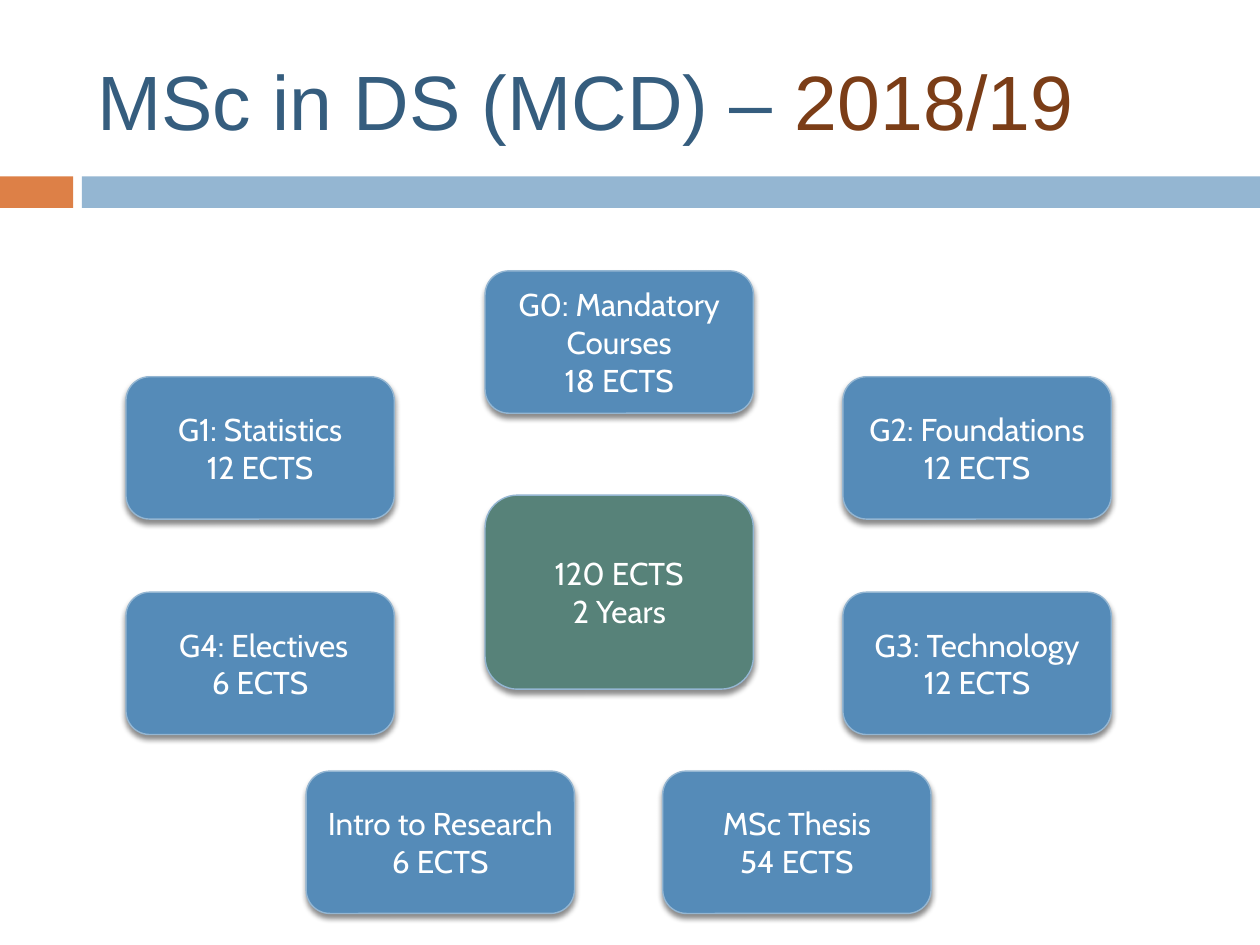
from lxml import etree
from pptx import Presentation
from pptx.dml.color import RGBColor
from pptx.enum.shapes import MSO_SHAPE
from pptx.enum.text import MSO_ANCHOR, PP_ALIGN
from pptx.oxml.ns import qn
from pptx.util import Inches, Pt

RECT, ROUNDED = MSO_SHAPE.RECTANGLE, MSO_SHAPE.ROUNDED_RECTANGLE
MIDDLE = MSO_ANCHOR.MIDDLE
LEFT, CENTER = PP_ALIGN.LEFT, PP_ALIGN.CENTER

COLORS = {
    "orange": "DD8047", "pale": "94B6D2", "blue": "558BB8", "green": "578279",
    "navy": "355D7E", "brown": "7B3D17", "white": "FFFFFF", "shadow": "000000",
}

# Content
TITLE = [("MSc in DS (MCD) – ", "navy"), ("2018/19", "brown")]
BANDS = [(0, 0.58, "orange"), (0.65, 9.35, "pale")]  # left, width, colour
COLS = {"left": 1, "mid": 3.85, "right": 6.69, "low left": 2.43, "low right": 5.26}
ROWS = {"top": 2.15, "upper": 2.99, "center": 3.93, "lower": 4.7, "bottom": 6.12}
BOX_W, BOX_H, HUB_H = 2.13, 1.13, 1.54
HUB = ("mid", "center", "120 ECTS", "2 Years")
GROUPS = [
    ("mid", "top", "G0: Mandatory Courses", "18 ECTS"),
    ("left", "upper", "G1: Statistics", "12 ECTS"),
    ("right", "upper", "G2: Foundations", "12 ECTS"),
    ("right", "lower", "G3: Technology", "12 ECTS"),
    ("left", "lower", " G4: Electives", "6 ECTS"),
    ("low right", "bottom", "MSc Thesis", "54 ECTS"),
    ("low left", "bottom", "Intro to Research", "6 ECTS"),
]


def rgb(name):
    return RGBColor.from_string(COLORS[name])


def style_run(r, font, size, color):
    r.font.name, r.font.size = font, Pt(size)
    r.font.color.rgb = rgb(color)


def add_block(s, kind, x, y, w, h, color):
    sp = s.shapes.add_shape(kind, Inches(x), Inches(y), Inches(w), Inches(h))
    sp.fill.solid()
    sp.fill.fore_color.rgb = rgb(color)
    sp.line.fill.background()
    sp.shadow.inherit = False
    return sp


def add_drop_shadow(sp):
    effects = sp._element.spPr.find(qn("a:effectLst"))
    shadow = etree.SubElement(effects, qn("a:outerShdw"), blurRad=str(Pt(3)),
                              dist=str(Pt(2.4)), dir="5400000", rotWithShape="0")
    color = etree.SubElement(shadow, qn("a:srgbClr"), val=COLORS["shadow"])
    etree.SubElement(color, qn("a:alpha"), val="45000")


def add_box(s, box, height, color):
    col, row, *lines = box
    sp = add_block(s, ROUNDED, COLS[col], ROWS[row], BOX_W, height, color)
    sp.line.color.rgb = rgb("pale")
    sp.line.width = Pt(0.79)
    add_drop_shadow(sp)
    tf = sp.text_frame
    tf.text = "\n".join(lines)
    tf.word_wrap = True
    tf.vertical_anchor = MIDDLE
    for p in tf.paragraphs:
        p.alignment = CENTER
        style_run(p.runs[0], "Cabin", 18, "white")


prs = Presentation()
prs.slide_width, prs.slide_height = Inches(10), Inches(7.5)
s = prs.slides.add_slide(prs.slide_layouts[5])

# Bands under the title
for x, w, color in BANDS:
    add_block(s, RECT, x, 1.4, w, 0.25, color)

# Title
title = s.shapes.title
title.left, title.top = Inches(0.67), Inches(0.25)
title.width, title.height = Inches(8.92), Inches(1.08)
title.text_frame.vertical_anchor = MIDDLE
p = title.text_frame.paragraphs[0]
p.alignment = LEFT
for text, color in TITLE:
    r = p.add_run()
    r.text = text
    style_run(r, "Arial", 44, color)

# Programme total, ringed by the course groups
add_box(s, HUB, HUB_H, "green")
for group in GROUPS:
    add_box(s, group, BOX_H, "blue")

prs.save("out.pptx")
